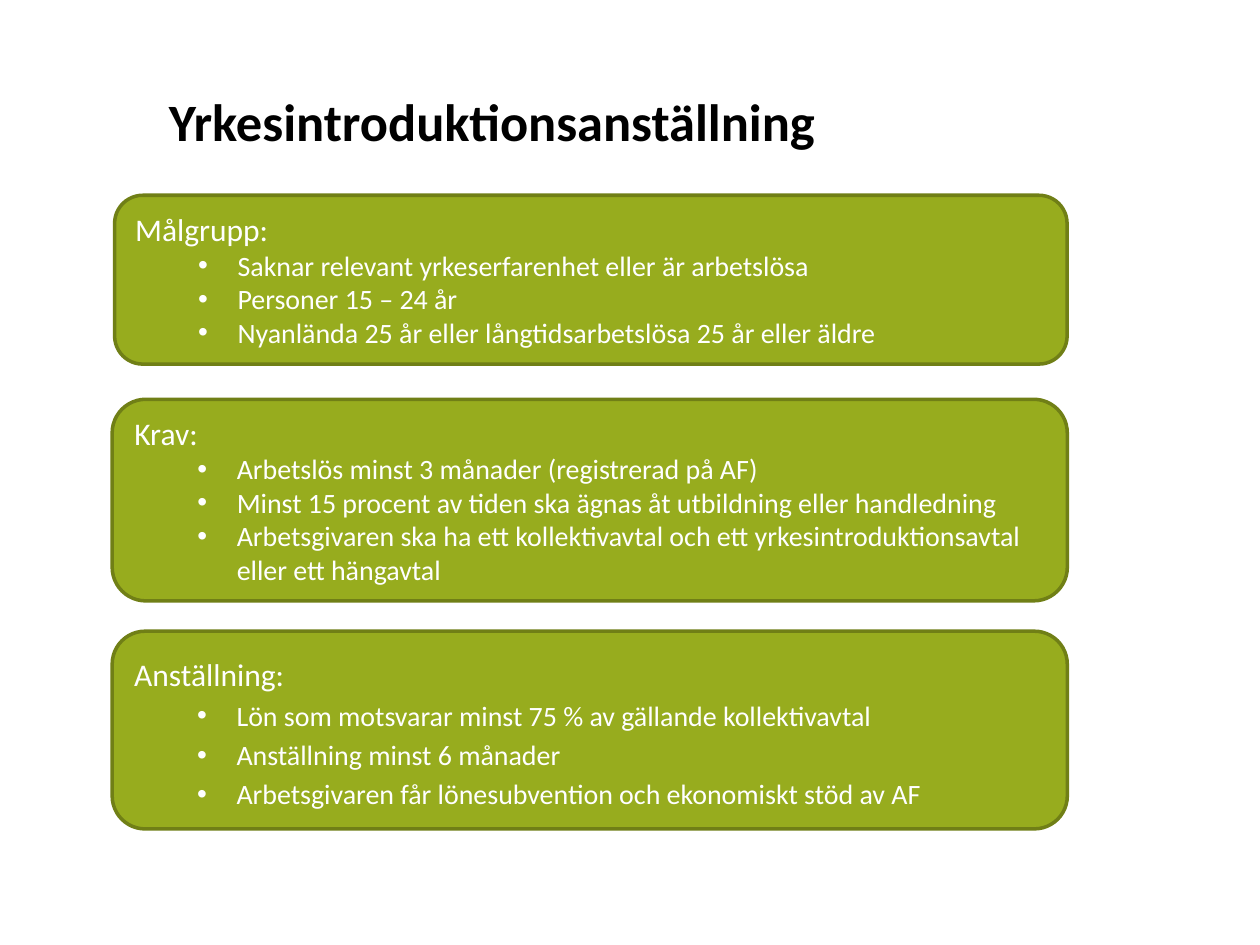
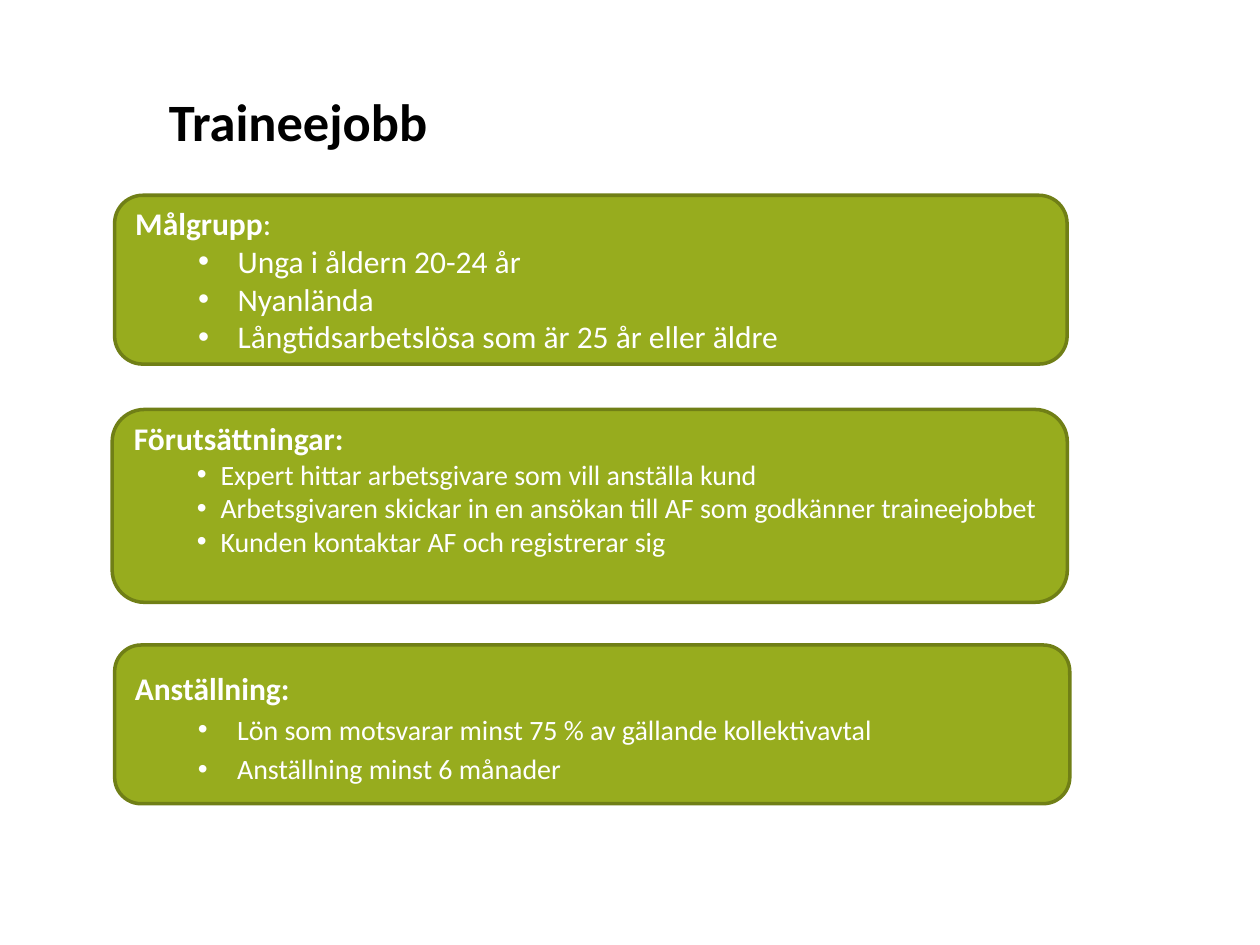
from lxml.etree import SubElement
from pptx import Presentation
from pptx.dml.color import RGBColor
from pptx.enum.shapes import MSO_SHAPE
from pptx.enum.text import MSO_ANCHOR, MSO_AUTO_SIZE, PP_ALIGN
from pptx.oxml.ns import qn
from pptx.util import Pt

COLORS = {"title": "000000", "panel": "97AC1E", "border": "707F16", "text": "FFFFFF"}
FONT = "Calibri"
TITLE_BOX = (89.3, 21.6, 611.3, 90)
INSET = 3.6
HEADING_SIZE = 18
WIDE_INDENT = (58.5, 22.5)
NARROW_INDENT = (49.5, 13.5)

SLIDES = [
    ("Yrkesintroduktionsanställning", [
        {"box": (65.5, 111.6, 544.3, 96.5),
         "heading": [("Målgrupp:", False)],
         "items": ["Saknar relevant yrkeserfarenhet eller är arbetslösa",
                   "Personer 15 – 24 år",
                   "Nyanlända 25 år eller långtidsarbetslösa 25 år eller äldre"]},
        {"box": (64.1, 228.2, 545.8, 115.2),
         "heading": [("Krav:", False)],
         "items": ["Arbetslös minst 3 månader (registrerad på AF)",
                   "Minst 15 procent av tiden ska ägnas åt utbildning eller handledning",
                   "Arbetsgivaren ska ha ett kollektivavtal och ett yrkesintroduktionsavtal "
                   "eller ett hängavtal"]},
        {"box": (64.1, 360.7, 545.8, 113),
         "heading": [("Anställning:", False)],
         "gap": 3.2,
         "items": ["Lön som motsvarar minst 75 % av gällande kollektivavtal",
                   "Anställning minst 6 månader",
                   "Arbetsgivaren får lönesubvention och ekonomiskt stöd av AF"]},
    ]),
    ("Traineejobb", [
        {"box": (65.5, 111.6, 544.3, 96.5),
         "heading": [("Målgrupp", True), (":", False)],
         "item_size": 18,
         "items": ["Unga i åldern 20-24 år",
                   "Nyanlända",
                   "Långtidsarbetslösa som är 25 år eller äldre"]},
        {"box": (64.1, 234, 545.8, 110.2),
         "heading": [("Förutsättningar:", True)],
         "indent": NARROW_INDENT,
         "space_below": 19.5,
         "items": ["Expert hittar arbetsgivare som vill anställa kund",
                   "Arbetsgivaren skickar in en ansökan till AF som godkänner traineejobbet",
                   "Kunden kontaktar AF och registrerar sig"]},
        {"box": (65.5, 368.6, 545.8, 90.7),
         "heading": [("Anställning:", True)],
         "gap": 3.2,
         "items": ["Lön som motsvarar minst 75 % av gällande kollektivavtal",
                   "Anställning minst 6 månader"]},
    ]),
]


def apply_format(target, values):
    for name, value in values.items():
        setattr(target, name, value)


def add_run(paragraph, text, size, color, bold=False):
    run = paragraph.add_run()
    run.text = text
    apply_format(run.font, {"name": FONT, "size": Pt(size), "bold": bold})
    run.font.color.rgb = RGBColor.from_string(COLORS[color])


def add_title(slide, text):
    title = slide.shapes.title
    apply_format(title, dict(zip(("left", "top", "width", "height"), map(Pt, TITLE_BOX))))
    apply_format(title.text_frame, {"vertical_anchor": MSO_ANCHOR.MIDDLE, "word_wrap": True,
                                    "auto_size": MSO_AUTO_SIZE.NONE})
    paragraph = title.text_frame.paragraphs[0]
    apply_format(paragraph, {"alignment": PP_ALIGN.LEFT, "line_spacing": Pt(40)})
    add_run(paragraph, text, 30, "title", True)


def set_bullet(paragraph, margin, hanging):
    properties = paragraph._p.get_or_add_pPr()
    properties.set("marL", str(Pt(margin)))
    properties.set("indent", str(-Pt(hanging)))
    SubElement(properties, qn("a:buFont"), typeface="Arial")
    SubElement(properties, qn("a:buChar"), char="•")


def add_panel(slide, box, heading, items, item_size=16, indent=WIDE_INDENT, gap=0, space_below=0):
    panel = slide.shapes.add_shape(MSO_SHAPE.ROUNDED_RECTANGLE, *map(Pt, box))
    panel.shadow.inherit = False
    panel.fill.solid()
    panel.fill.fore_color.rgb = RGBColor.from_string(COLORS["panel"])
    panel.line.color.rgb = RGBColor.from_string(COLORS["border"])
    panel.line.width = Pt(2)
    frame = panel.text_frame
    apply_format(frame, {"vertical_anchor": MSO_ANCHOR.MIDDLE, "word_wrap": True,
                         "margin_top": Pt(INSET + gap),
                         "margin_bottom": Pt(INSET + space_below)})
    paragraph = frame.paragraphs[0]
    paragraph.alignment = PP_ALIGN.LEFT
    for text, bold in heading:
        add_run(paragraph, text, HEADING_SIZE, "text", bold)
    for item in items:
        paragraph = frame.add_paragraph()
        set_bullet(paragraph, *indent)
        apply_format(paragraph, {"level": 1, "alignment": PP_ALIGN.LEFT, "space_before": Pt(gap)})
        add_run(paragraph, item, item_size, "text")


def main():
    presentation = Presentation()
    apply_format(presentation, {"slide_width": Pt(720), "slide_height": Pt(540)})
    for title, panels in SLIDES:
        slide = presentation.slides.add_slide(presentation.slide_layouts[5])
        add_title(slide, title)
        for panel in panels:
            add_panel(slide, **panel)
    presentation.save("out.pptx")


if __name__ == "__main__":
    main()
